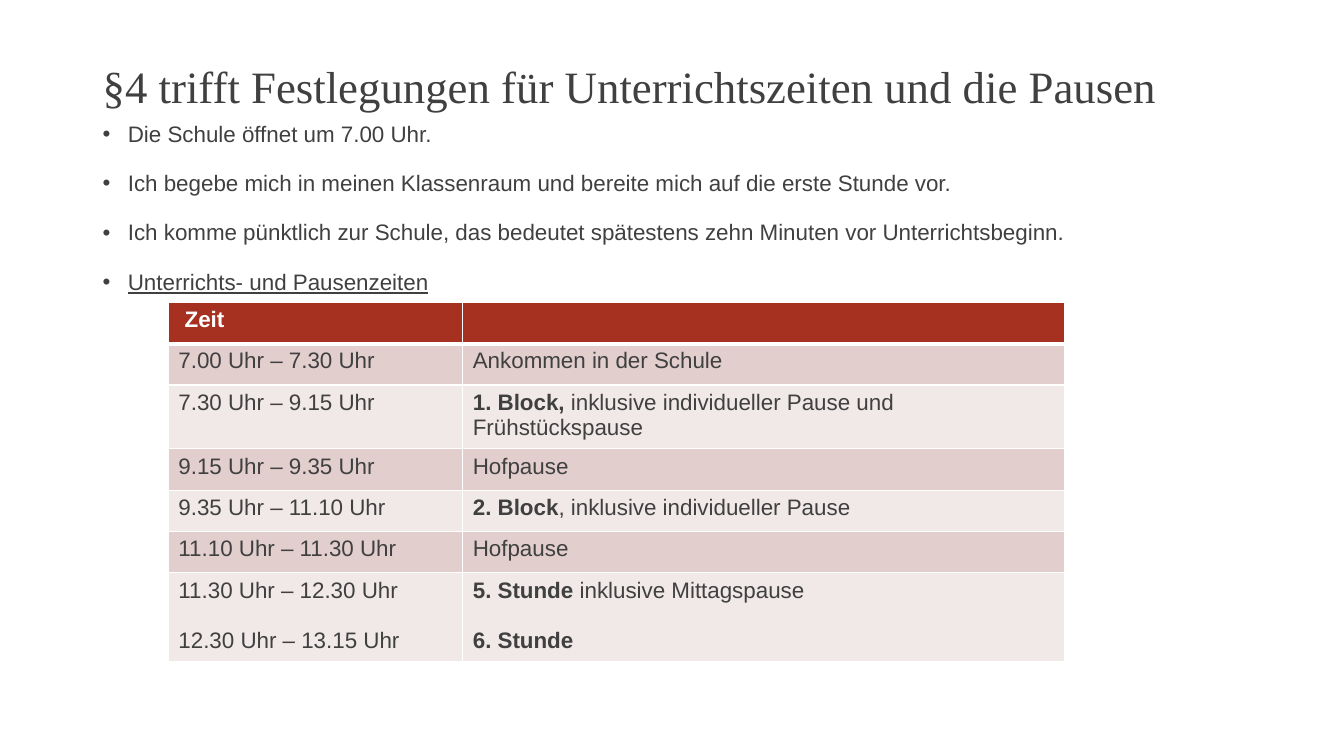
from lxml.etree import SubElement
from pptx import Presentation
from pptx.dml.color import RGBColor
from pptx.enum.text import MSO_ANCHOR
from pptx.oxml.ns import qn
from pptx.util import Inches, Pt

INK = RGBColor(0x40, 0x40, 0x40)
WHITE = RGBColor(0xFF, 0xFF, 0xFF)
HEADER_RED = RGBColor(0xA6, 0x31, 0x21)
BANDS = [RGBColor(0xE1, 0xCE, 0xCD), RGBColor(0xF1, 0xE8, 0xE8)]

TITLE = "§4 trifft Festlegungen für Unterrichtszeiten und die Pausen"
RULES = [
    "Die Schule öffnet um 7.00 Uhr.",
    "Ich begebe mich in meinen Klassenraum und bereite mich auf die erste Stunde vor.",
    "Ich komme pünktlich zur Schule, das bedeutet spätestens zehn Minuten vor Unterrichtsbeginn.",
    "Unterrichts- und Pausenzeiten",
]
COLUMN_WIDTHS = [2.92, 5.97]
ROW_HEIGHT = 0.41
TIMETABLE = [
    (["7.00 Uhr – 7.30 Uhr"], [("", "Ankommen in der Schule")]),
    (["7.30 Uhr – 9.15 Uhr"],
     [("1. Block, ", "inklusive individueller Pause und Frühstückspause")]),
    (["9.15 Uhr – 9.35 Uhr"], [("", "Hofpause")]),
    (["9.35 Uhr – 11.10 Uhr"], [("2. Block", ", inklusive individueller Pause")]),
    (["11.10 Uhr – 11.30 Uhr"], [("", "Hofpause")]),
    (["11.30 Uhr – 12.30 Uhr", "12.30 Uhr – 13.15 Uhr"],
     [("5. Stunde ", "inklusive Mittagspause"), ("6. Stunde", "")]),
]


def add_span(para, text, size=16, font="Arial", color=INK, bold=False, underline=False):
    span = para.add_run()
    span.text = text
    span.font.size = Pt(size)
    span.font.name = font
    span.font.color.rgb = color
    span.font.bold = bold
    span.font.underline = underline


def next_para(frame, index, gap=18):
    if index == 0:
        return frame.paragraphs[0]
    para = frame.add_paragraph()
    para.space_before = Pt(gap)
    return para


def add_text_box(page, left, top, width, height):
    box = page.shapes.add_textbox(Inches(left), Inches(top), Inches(width), Inches(height))
    box.text_frame.word_wrap = True
    return box.text_frame


def add_bullet(para):
    properties = para._p.get_or_add_pPr()
    properties.set("marL", str(Inches(0.25)))
    properties.set("indent", str(Inches(-0.25)))
    SubElement(properties, qn("a:buFont"), typeface="Arial")
    SubElement(properties, qn("a:buChar"), char="•")


def add_title(page, left, top, width, height):
    frame = add_text_box(page, left, top, width, height)
    frame.vertical_anchor = MSO_ANCHOR.BOTTOM
    para = frame.paragraphs[0]
    para.line_spacing = 0.9
    add_span(para, TITLE, size=32, font="Times New Roman")


def add_rules(page, left, top, width, height):
    frame = add_text_box(page, left, top, width, height)
    for index, rule in enumerate(RULES):
        para = next_para(frame, index)
        para.line_spacing = 0.9
        add_bullet(para)
        add_span(para, rule, underline=rule == RULES[-1])


def style_cell(cell, color, top=1, bottom=1):
    properties = cell._tc.get_or_add_tcPr()
    for side, points in (("L", 1), ("R", 1), ("T", top), ("B", bottom)):
        line = SubElement(properties, qn(f"a:ln{side}"), w=str(Pt(points)))
        fill = SubElement(line, qn("a:solidFill"))
        SubElement(fill, qn("a:srgbClr"), val=str(WHITE))
    cell.fill.solid()
    cell.fill.fore_color.rgb = color


def add_timetable(page, left, top):
    row_count = len(TIMETABLE) + 1
    table = page.shapes.add_table(
        row_count, len(COLUMN_WIDTHS), Inches(left), Inches(top),
        Inches(sum(COLUMN_WIDTHS)), Inches(ROW_HEIGHT * row_count)).table
    for column, width in zip(table.columns, COLUMN_WIDTHS):
        column.width = Inches(width)
    for row in table.rows:
        row.height = Inches(ROW_HEIGHT)
    for cell in table.rows[0].cells:
        style_cell(cell, HEADER_RED, bottom=3)
    add_span(table.cell(0, 0).text_frame.paragraphs[0], " Zeit", color=WHITE, bold=True)

    for row, (times, events) in enumerate(TIMETABLE, start=1):
        time_cell, event_cell = table.rows[row].cells
        for cell in (time_cell, event_cell):
            style_cell(cell, BANDS[(row - 1) % 2], top=3 if row == 1 else 1)
        for index, time in enumerate(times):
            add_span(next_para(time_cell.text_frame, index), time)
        for index, (name, detail) in enumerate(events):
            para = next_para(event_cell.text_frame, index)
            if name:
                add_span(para, name, bold=True)
            if detail:
                add_span(para, detail)


def main():
    deck = Presentation()
    deck.slide_width = Inches(13.33)
    deck.slide_height = Inches(7.5)
    page = deck.slides.add_slide(deck.slide_layouts[6])
    add_title(page, 0.92, 0.4, 10.75, 0.77)
    add_rules(page, 0.92, 1.17, 12, 5.25)
    add_timetable(page, 1.67, 3)
    deck.save("out.pptx")


if __name__ == "__main__":
    main()
